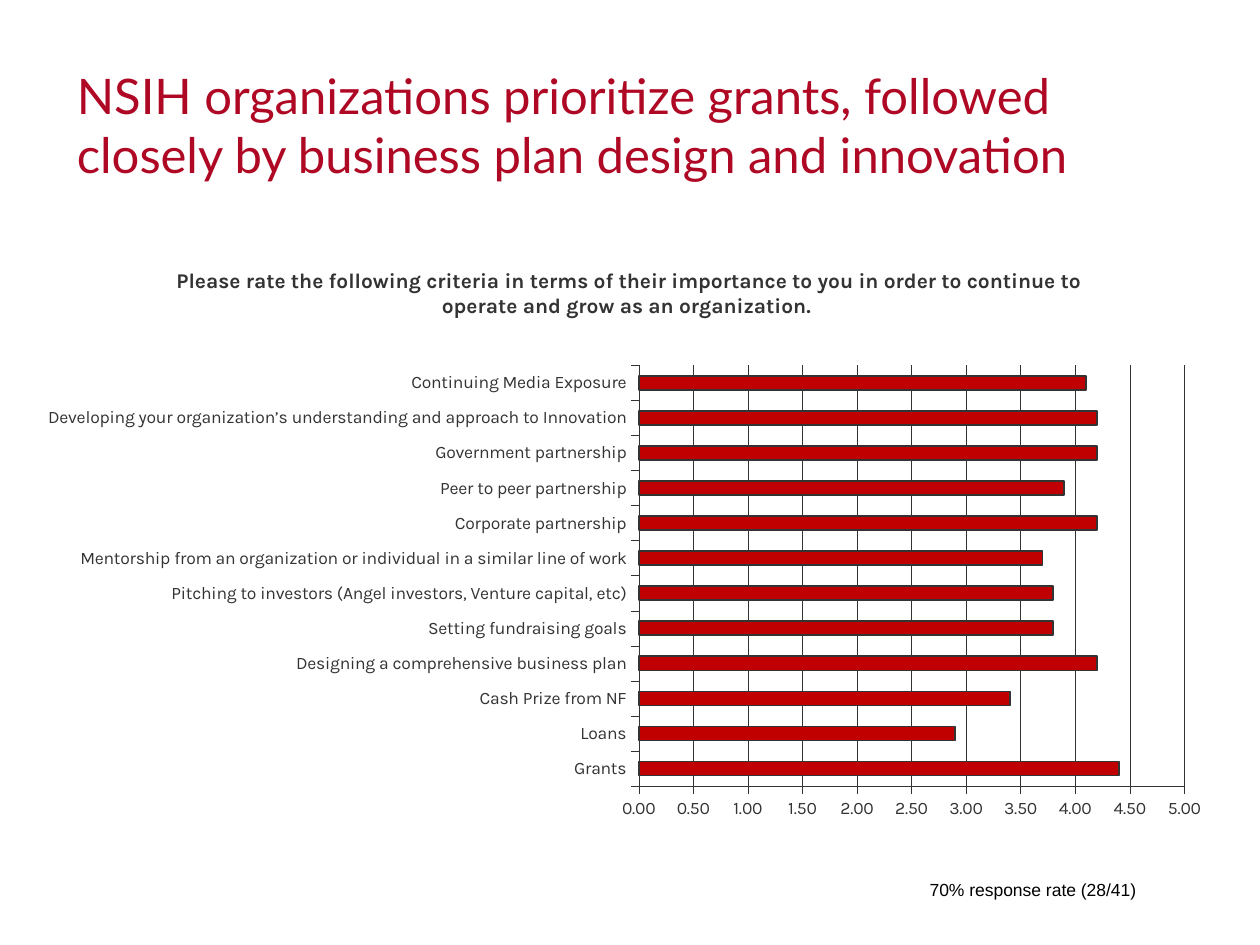
import pptx
import pptx.chart.data
import pptx.dml.color
import pptx.enum.chart
import pptx.enum.text
import pptx.oxml
import pptx.oxml.ns
import pptx.util
from pptx.util import Inches, Pt

HEAD = "NSIH organizations prioritize grants, followed closely by business plan design and innovation"
ASK = ("Please rate the following criteria in terms of their importance to you "
       "in order to continue to operate and grow as an organization. ")
NOTE = "70% response rate (28/41)"
SCORES = [
    ("Grants", 4.4),
    ("Loans", 2.9),
    ("Cash Prize from NF", 3.4),
    ("Designing a comprehensive business plan", 4.2),
    ("Setting fundraising goals", 3.8),
    ("Pitching to investors (Angel investors, Venture capital, etc)", 3.8),
    ("Mentorship from an organization or individual in a similar line of work", 3.7),
    ("Corporate partnership", 4.2),
    ("Peer to peer partnership", 3.9),
    ("Government partnership", 4.2),
    ("Developing your organization’s understanding and approach to Innovation", 4.2),
    ("Continuing Media Exposure", 4.1),
]
RED, BAR, GRAY, BLACK = "AF0824", "C00000", "333333", "000000"
WIDE, HIGH = 9.55, 5  # chart size in inches


def color(code):
    return pptx.dml.color.RGBColor.from_string(code)


def style(font, size, name, code, bold=False):
    font.size, font.name, font.bold = Pt(size), name, bold
    font.color.rgb = color(code)


def write(frame, text, size, name, code, bold=False, align=None):
    frame.text = text
    para = frame.paragraphs[0]
    para.alignment = align
    style(para.runs[0].font, size, name, code, bold)


def stroke(line, width):
    line.color.rgb, line.width = color(GRAY), Pt(width)


def place(owner, **spots):
    """Lay out a chart title or plot area, in inches from the chart's corner."""
    ns = pptx.oxml.ns
    old = owner.find(ns.qn("c:layout"))
    if old is not None:
        owner.remove(old)
    inner = '<c:layoutTarget val="inner"/>' if "w" in spots else ""
    modes = "".join(f'<c:{key}Mode val="edge"/>' for key in "xy")
    sizes = "".join(f'<c:{key} val="{val / (WIDE if key in "xw" else HIGH)}"/>'
                    for key, val in spots.items())
    layout = pptx.oxml.parse_xml(
        f'<c:layout {ns.nsdecls("c")}><c:manualLayout>{inner}{modes}{sizes}'
        '</c:manualLayout></c:layout>')
    text = owner.find(ns.qn("c:tx"))
    owner.insert(0 if text is None else 1, layout)


def add_scores(slide):
    data = pptx.chart.data.CategoryChartData(number_format="0.00")
    data.categories = [name for name, _ in SCORES]
    data.add_series("Series 1", [score for _, score in SCORES])
    kinds = pptx.enum.chart
    chart = slide.shapes.add_chart(
        kinds.XL_CHART_TYPE.BAR_CLUSTERED, Inches(0.22), Inches(1.9),
        Inches(WIDE), Inches(HIGH), data).chart
    style(chart.font, 10, "Karla", GRAY)
    chart.has_legend = False
    write(chart.chart_title.text_frame, ASK, 12, "Karla", GRAY, bold=True)
    place(chart.chart_title._element, x=1.15, y=0.18)
    place(chart._chartSpace.chart.plotArea, x=4.85, y=1, w=4.33, h=3.34)

    plot = chart.plots[0]
    plot.gap_width, plot.vary_by_categories = 150, False
    bars = plot.series[0]
    bars.format.fill.solid()
    bars.format.fill.fore_color.rgb = color(BAR)
    stroke(bars.format.line, 1)

    for axis in (chart.category_axis, chart.value_axis):
        axis.major_tick_mark = kinds.XL_TICK_MARK.OUTSIDE
        style(axis.tick_labels.font, 10, "Karla", GRAY)
        stroke(axis.format.line, 0.25)
    axis = chart.value_axis
    axis.minimum_scale, axis.maximum_scale, axis.major_unit = 0, 5, 0.5
    axis.tick_labels.number_format = "0.00"
    axis.tick_labels.number_format_is_linked = False
    axis.has_major_gridlines = True
    stroke(axis.major_gridlines.format.line, 0.25)


def main():
    deck = pptx.Presentation()
    deck.slide_width, deck.slide_height = Inches(10), Inches(7.5)
    slide = deck.slides.add_slide(deck.slide_layouts[5])
    title = slide.shapes.title
    title.left, title.top = Inches(0.51), Inches(0.64)
    title.width, title.height = Inches(8.43), Inches(0.69)
    frame = title.text_frame
    frame.vertical_anchor = pptx.enum.text.MSO_ANCHOR.MIDDLE
    frame.auto_size = pptx.enum.text.MSO_AUTO_SIZE.NONE
    write(frame, HEAD, 28, "Lato", RED, align=pptx.enum.text.PP_ALIGN.LEFT)

    add_scores(slide)

    note = slide.shapes.add_textbox(Inches(7.28), Inches(6.93), Inches(2.2), Inches(0.27))
    note.text_frame.word_wrap = True
    write(note.text_frame, NOTE, 10, "Arial", BLACK)
    deck.save("out.pptx")


if __name__ == "__main__":
    main()
